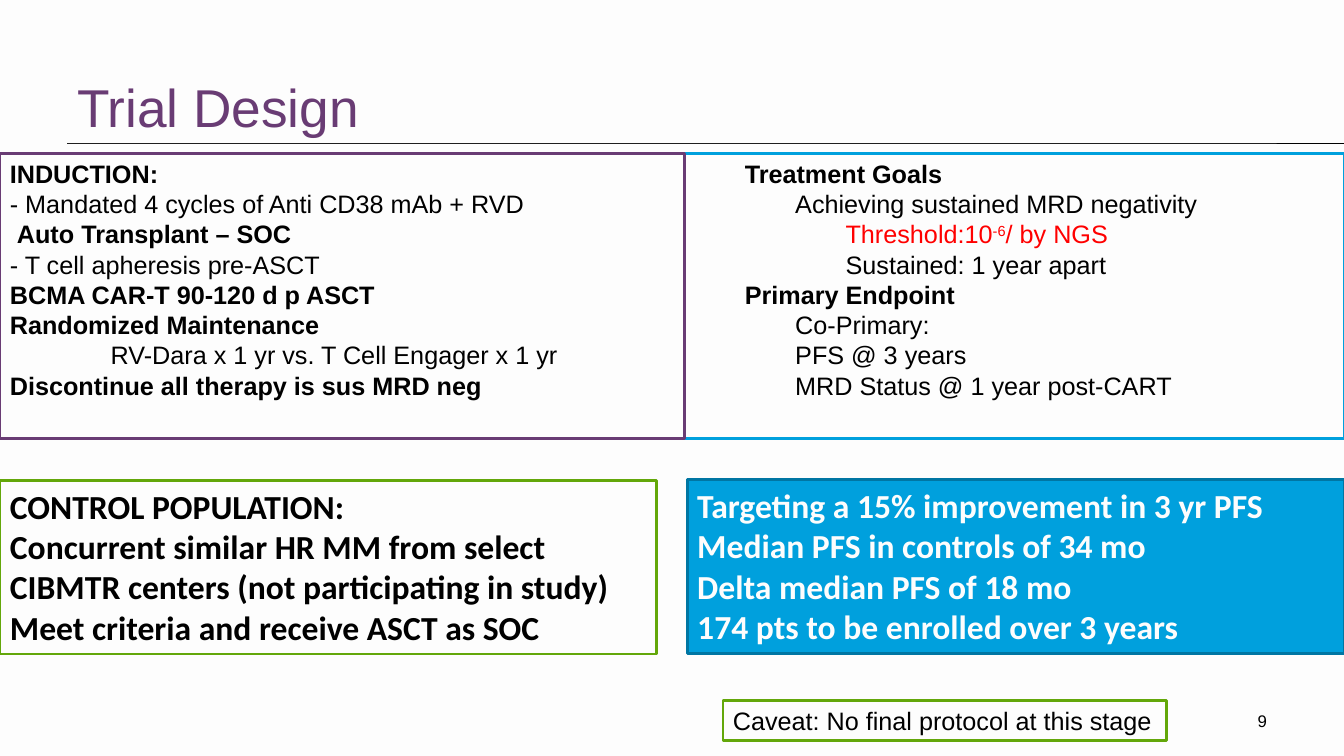
from lxml import etree
from pptx import Presentation
from pptx import util as u
from pptx.dml.color import RGBColor
from pptx.enum import shapes, text
from pptx.oxml.ns import qn

PAPER = RGBColor(0xFD, 0xFD, 0xFD)
BLACK = RGBColor(0x00, 0x00, 0x00)
PURPLE = RGBColor(0x69, 0x3C, 0x74)
BLUE = RGBColor(0x00, 0xA0, 0xDD)
DEEP_BLUE = RGBColor(0x00, 0x76, 0xA3)
GREEN = RGBColor(0x63, 0xA7, 0x0A)
RED = RGBColor(0xFF, 0x00, 0x00)


class TrialSlide:
    """Draws styled elements on one slide, placed in percent of its size."""

    def __init__(self, deck):
        self.width, self.height = deck.slide_width, deck.slide_height
        self.page = deck.slides.add_slide(deck.slide_layouts[6])
        self.page.background.fill.solid()
        self.page.background.fill.fore_color.rgb = PAPER

    def across(self, share):
        return round(self.width * share / 100)

    def down(self, share):
        return round(self.height * share / 100)

    def place(self, left, top, width, height):
        return self.across(left), self.down(top), self.across(width), self.down(height)

    def rule(self, left, right, top):
        line = self.page.shapes.add_connector(
            shapes.MSO_CONNECTOR.STRAIGHT,
            self.across(left), self.down(top), self.across(right), self.down(top))
        line.line.color.rgb = BLACK
        line.line.width = u.Pt(0.75)
        etree.SubElement(line._element.spPr, qn("a:effectLst"))

    def panel(self, area, paragraphs, fill=PAPER, border=None, **style):
        box = self.page.shapes.add_shape(shapes.MSO_SHAPE.RECTANGLE, *self.place(*area))
        box.shadow.inherit = False
        box.fill.solid()
        box.fill.fore_color.rgb = fill
        if border is None:
            box.line.fill.background()
        else:
            box.line.color.rgb = border
            box.line.width = u.Pt(2)
        self.fill_text(box.text_frame, paragraphs, **style)

    def label(self, area, paragraphs, **style):
        box = self.page.shapes.add_textbox(*self.place(*area))
        self.fill_text(box.text_frame, paragraphs, **style)

    def fill_text(self, frame, paragraphs, size=18, font="Arial", color=BLACK, wrap=True,
                  anchor=text.MSO_ANCHOR.TOP, align=text.PP_ALIGN.LEFT):
        frame.word_wrap = wrap
        frame.vertical_anchor = anchor
        for index, (level, indent, bold, spans) in enumerate(paragraphs):
            para = frame.paragraphs[0] if index == 0 else frame.add_paragraph()
            para.level = level
            para.alignment = align
            properties = para._p.get_or_add_pPr()
            properties.set("marL", str(u.Inches(indent)))
            properties.set("indent", "0")
            for words, tint, baseline in spans:
                span = para.add_run()
                span.text = words
                span.font.name = font
                span.font.size = u.Pt(size)
                span.font.bold = bold
                span.font.color.rgb = tint or color
                if baseline:
                    span.font._element.set("baseline", str(baseline * 1000))


def plain(words, bold=False, indent=0):
    return 0, indent, bold, [(words, None, 0)]


def outline(level, *spans, bold=False):
    return level, level * 0.5, bold, spans


def main():
    deck = Presentation()
    deck.slide_width, deck.slide_height = u.Inches(13.33), u.Inches(7.5)
    slide = TrialSlide(deck)

    slide.rule(5, 100, 18.93)
    slide.panel((5, 2.27, 90, 16.67), [plain("Trial Design")],
                size=38, color=PURPLE, anchor=text.MSO_ANCHOR.BOTTOM)
    slide.label((90, 92.67, 5, 5.33), [plain("9")], size=12,
                anchor=text.MSO_ANCHOR.MIDDLE, align=text.PP_ALIGN.RIGHT)

    slide.panel((50.93, 20.27, 49.07, 37.73), [
        outline(1, ("Treatment Goals", None, 0), bold=True),
        outline(2, ("Achieving sustained MRD negativity", None, 0)),
        outline(3, ("Threshold:10", RED, 0), ("-6", RED, 30), ("/ by NGS", RED, 0)),
        outline(3, ("Sustained: 1 year apart", None, 0)),
        outline(1, ("Primary Endpoint", None, 0), bold=True),
        outline(2, ("Co-Primary:", None, 0)),
        outline(2, ("PFS @ 3 years", None, 0)),
        outline(2, ("MRD Status @ 1 year post-CART", None, 0)),
    ], border=BLUE)

    slide.panel((0, 20.27, 50.93, 37.73), [
        plain("INDUCTION:", bold=True),
        plain("- Mandated 4 cycles of Anti CD38 mAb + RVD"),
        plain("Auto Transplant – SOC", bold=True, indent=0.07),
        plain("- T cell apheresis pre-ASCT"),
        plain("BCMA CAR-T 90-120 d p ASCT", bold=True),
        plain("Randomized Maintenance", bold=True),
        plain("RV-Dara x 1 yr vs. T Cell Engager x 1 yr", indent=1),
        plain("Discontinue all therapy is sus MRD neg", bold=True),
    ], border=PURPLE)

    targets = ["Targeting a 15% improvement in 3 yr PFS",
               "Median PFS in controls of 34 mo",
               "Delta median PFS of 18 mo",
               "174 pts to be enrolled over 3 years"]
    controls = ["CONTROL POPULATION:",
                "Concurrent similar HR MM from select CIBMTR centers (not participating in study)",
                "Meet criteria and receive ASCT as SOC"]
    for left, top, lines, fill, border, color in (
            (51.14, 63.47, targets, BLUE, DEEP_BLUE, PAPER),
            (0, 63.6, controls, PAPER, GREEN, BLACK)):
        slide.panel((left, top, 48.86, 22.93), [plain(line, bold=True) for line in lines],
                    fill=fill, border=border, size=24, font="Calibri", color=color)

    slide.panel((53.79, 92.67, 33, 5.33), [plain("Caveat: No final protocol at this stage")],
                border=GREEN, wrap=False)
    deck.save("out.pptx")


if __name__ == "__main__":
    main()
